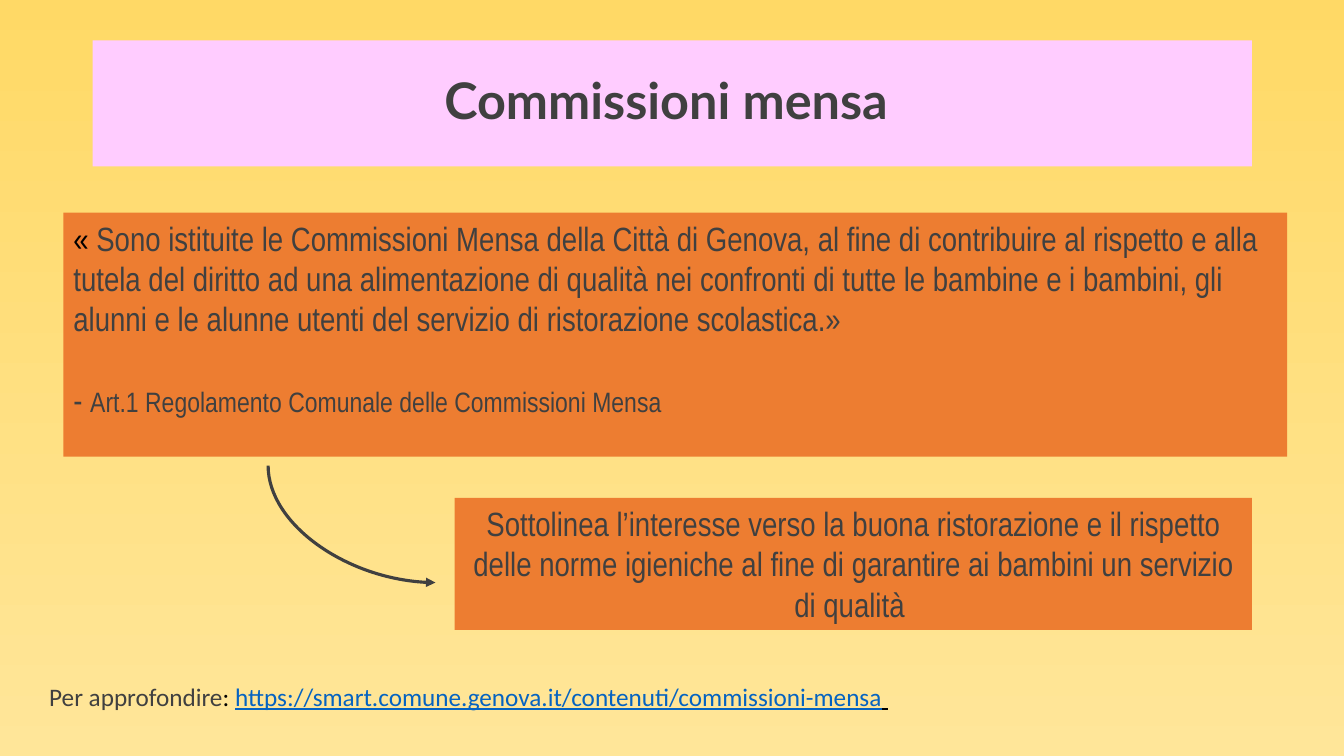
from dataclasses import dataclass

from lxml import etree
from pptx import Presentation
from pptx import util as u
from pptx.dml.color import RGBColor
from pptx.enum import shapes, text
from pptx.oxml.ns import qn


@dataclass(frozen=True)
class Theme:
    """Colours, fonts and type sizes of the deck."""
    sky: str = "FFD966"
    sand: str = "FFE699"
    pink: str = "FFCCFF"
    orange: str = "ED7D31"
    ink: str = "404040"
    black: str = "000000"
    link: str = "0563C1"
    heading: str = "Lato"
    narrow: str = "Arial Narrow"
    plain: str = "Calibri"
    title: int = 36
    body: int = 24
    source: int = 20
    footer: int = 18


class Slide:
    """Draws styled elements on the current page."""

    def __init__(self, deck, theme):
        self.theme = theme
        self.page = deck.slides.add_slide(deck.slide_layouts[6])

    def background(self):
        """Fill the page with a vertical gradient."""
        fill = self.page.background.fill
        fill.gradient()
        fill.gradient_angle = 270
        for stop, colour in zip(fill.gradient_stops, (self.theme.sky, self.theme.sand)):
            stop.color.rgb = RGBColor.from_string(colour)

    def panel(self, place, colour, paragraphs, **formats):
        """Add a filled rectangle with text."""
        box = self.page.shapes.add_shape(shapes.MSO_SHAPE.RECTANGLE, *map(u.Pt, place))
        box.shadow.inherit = False
        box.fill.solid()
        box.fill.fore_color.rgb = RGBColor.from_string(colour)
        box.line.fill.background()
        self.add_text(box, paragraphs, **formats)

    def label(self, place, paragraphs, **formats):
        """Add a text box without fill."""
        box = self.page.shapes.add_textbox(*map(u.Pt, place))
        self.add_text(box, paragraphs, **formats)

    def add_text(self, box, paragraphs, anchor=text.MSO_ANCHOR.TOP, **formats):
        """Fill a box with paragraphs of (text, colour, font formats) spans."""
        frame = box.text_frame
        frame.word_wrap = True
        frame.vertical_anchor = anchor
        formats = {"alignment": text.PP_ALIGN.LEFT, **formats}
        for index, (spans, extra) in enumerate(paragraphs):
            para = frame.add_paragraph() if index else frame.paragraphs[0]
            for name, value in {**formats, **extra}.items():
                setattr(para, name, value)
            for words, colour, style in spans:
                span = para.add_run()
                span.text = words
                span.font.color.rgb = RGBColor.from_string(colour)
                for name, value in style.items():
                    setattr(span.font, name, value)

    def curved_arrow(self, left, top, width, height, colour, weight):
        """Add a quarter-bend arrow, turned to leave downwards and end rightwards."""
        arrow = self.page.shapes.add_connector(
            shapes.MSO_CONNECTOR.CURVE,
            *map(u.Pt, (left + width, top, left, top + height)))
        arrow.line.color.rgb = RGBColor.from_string(colour)
        arrow.line.width = u.Pt(weight)
        properties = arrow.element.spPr
        properties.find(qn("a:xfrm")).set("rot", "16200000")
        properties.find(qn("a:prstGeom")).set("prst", "curvedConnector2")
        etree.SubElement(properties.find(qn("a:ln")), qn("a:tailEnd"), type="triangle")
        etree.SubElement(properties, qn("a:effectLst"))


def main():
    """Build the slide and save it."""
    deck = Presentation()
    deck.slide_width, deck.slide_height = u.Pt(960), u.Pt(540)
    theme = Theme()
    slide = Slide(deck, theme)
    heading = {"name": theme.heading, "size": u.Pt(theme.title), "bold": True}
    body = {"name": theme.narrow, "size": u.Pt(theme.body)}
    source = {**body, "size": u.Pt(theme.source)}
    footer = {"name": theme.plain, "size": u.Pt(theme.footer)}
    link = {**footer, "underline": True}
    centre = text.PP_ALIGN.CENTER

    slide.background()
    slide.panel((66.24, 28.8, 828, 90), theme.pink,
                [([("Commissioni mensa ", theme.ink, heading)], {})],
                anchor=text.MSO_ANCHOR.MIDDLE, alignment=centre, line_spacing=0.9)
    slide.panel((45.36, 151.92, 874.08, 174.24), theme.orange, [
        ([("« ", theme.black, body),
          ("Sono istituite le Commissioni Mensa della Città di Genova, al fine di "
           "contribuire al rispetto e alla tutela del diritto ad una alimentazione di "
           "qualità nei confronti di tutte le bambine e i bambini, gli alunni e le "
           "alunne utenti del servizio di ristorazione scolastica.»", theme.ink, body)], {}),
        ([("- ", theme.ink, body),
          ("Art.1 Regolamento Comunale delle Commissioni Mensa", theme.ink, source)],
         {"space_before": u.Pt(28.8)}),
    ])
    slide.curved_arrow(209.52, 314.64, 83.52, 119.52, theme.ink, 2.25)
    slide.panel((324.72, 355.68, 569.52, 94.32), theme.orange, [
        ([("Sottolinea l’interesse verso la buona ristorazione e il rispetto delle norme "
           "igieniche al fine di garantire ai bambini un servizio di qualità ",
           theme.ink, body)], {}),
    ], alignment=centre)
    slide.label((28.08, 483.12, 653.76, 51.12), [
        ([("Per approfondire", theme.ink, footer),
          (": ", theme.black, footer),
          ("https://smart.comune.genova.it/contenuti/commissioni-mensa", theme.link, link),
          (" ", theme.black, link)], {}),
    ])
    deck.save("out.pptx")


if __name__ == "__main__":
    main()
